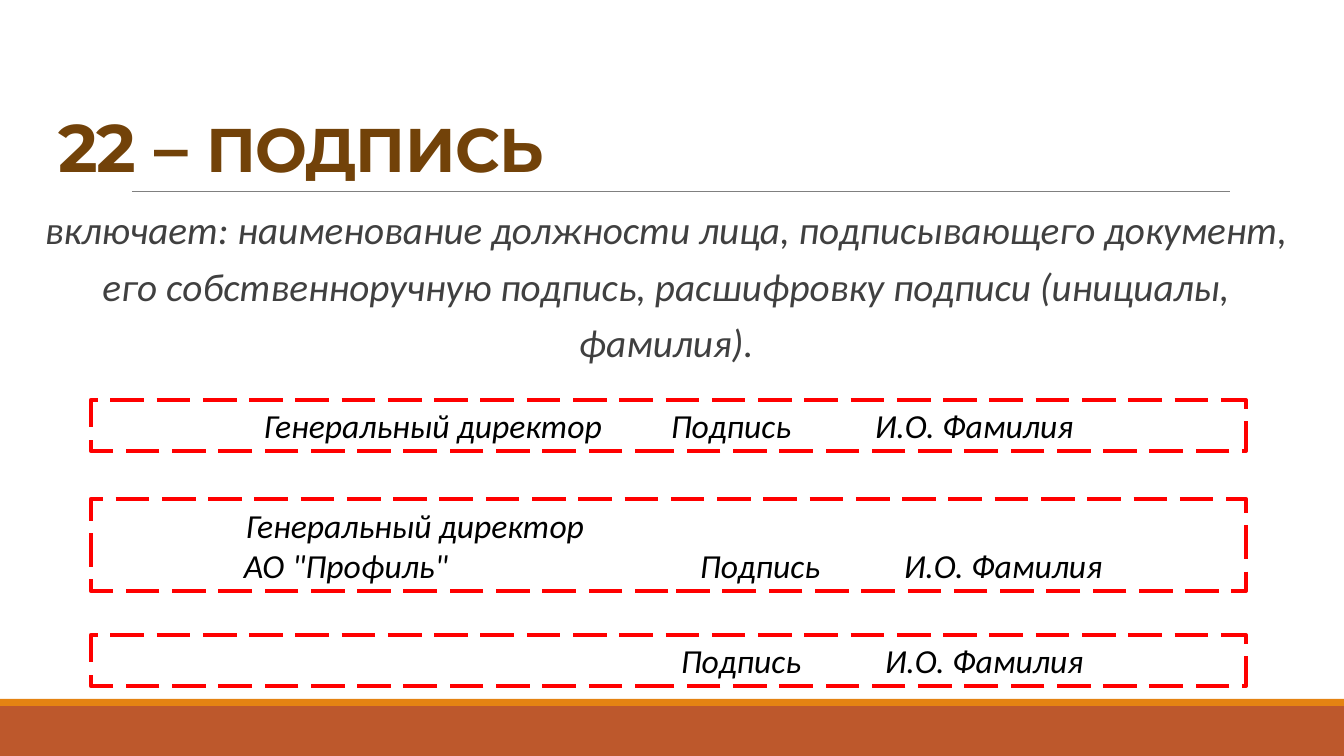
from dataclasses import dataclass
from lxml.etree import SubElement
from pptx import Presentation
from pptx.dml.color import RGBColor
from pptx.enum.dml import MSO_LINE
from pptx.enum.shapes import MSO_CONNECTOR, MSO_SHAPE
from pptx.enum.text import MSO_ANCHOR, MSO_AUTO_SIZE, PP_ALIGN
from pptx.oxml.ns import qn
from pptx.util import Emu, Inches, Pt


@dataclass(frozen=True)
class Theme:
    """Colours, fonts and type sizes of the slide."""
    rust: str = "BD582C"
    amber: str = "E48312"
    rule: str = "808080"
    brown: str = "724209"
    gray: str = "404040"
    black: str = "000000"
    red: str = "FF0000"
    head: str = "Montserrat"
    text: str = "Calibri"
    number: int = 48
    title: int = 44
    body: int = 28
    sample: int = 24


THEME = Theme()
SCALE = 914400 / 100.8
BOX_X, BOX_W, INSET = 91, 1155, 10
SAMPLES = [
    (400, 51, [("Генеральный директор", "Подпись", "И.О. Фамилия")], [(264, 671, 875)]),
    (499, 92,
     [("Генеральный директор",), ('АО "Профиль"', "Подпись", "И.О. Фамилия")],
     [(246,), (244, 700, 904)]),
    (635, 51, [("Подпись", "И.О. Фамилия")], [(681, 885)]),
]


def px(n):
    """Turn pixels into EMU."""
    return Emu(round(n * SCALE))


def color(code):
    """Turn a hex code into a colour."""
    return RGBColor.from_string(code)


def place(shape, x, y, w, h):
    """Move and size a shape in pixels."""
    shape.left, shape.top, shape.width, shape.height = map(px, (x, y, w, h))


def style(para, name, size, code, bold=False, italic=False):
    """Set the font of a whole paragraph."""
    font = para.font
    font.name, font.bold, font.italic = name, bold, italic
    font.color.rgb = color(code)
    if size:
        font.size = Pt(size)


def add_rect(slide, x, y, w, h):
    """Add a rectangle without shadow."""
    rect = slide.shapes.add_shape(MSO_SHAPE.RECTANGLE, *map(px, (x, y, w, h)))
    rect.shadow.inherit = False
    return rect


def add_band(slide, y, h, code):
    """Add a filled band across the slide."""
    band = add_rect(slide, 0, y, 1344, h)
    band.fill.solid()
    band.fill.fore_color.rgb = color(code)
    band.line.fill.background()


def add_rule(slide, x, y, end):
    """Add the thin line under the title."""
    rule = slide.shapes.add_connector(
        MSO_CONNECTOR.STRAIGHT, px(x), px(y), px(end), px(y))
    rule.line.color.rgb = color(THEME.rule)
    rule.line.width = Pt(0.5)
    SubElement(rule._element.spPr, qn("a:effectLst"))


def add_tabs(para, stops):
    """Give a paragraph left tab stops at slide pixels."""
    tabs = SubElement(para._p.get_or_add_pPr(), qn("a:tabLst"))
    for stop in stops:
        SubElement(tabs, qn("a:tab"), pos=str(px(stop - BOX_X - INSET)), algn="l")


def add_sample(slide, y, h, rows, stops):
    """Add a dashed box with rows of tabbed text."""
    box = add_rect(slide, BOX_X, y, BOX_W, h)
    box.fill.background()
    box.line.color.rgb = color(THEME.red)
    box.line.width = Pt(3)
    box.line.dash_style = MSO_LINE.LONG_DASH
    frame = box.text_frame
    frame.word_wrap = True
    frame.auto_size = MSO_AUTO_SIZE.SHAPE_TO_FIT_TEXT
    frame.text = "\n".join("\t" + "\t".join(row) for row in rows)
    for para, marks in zip(frame.paragraphs, stops):
        para.alignment = PP_ALIGN.LEFT
        add_tabs(para, marks)
        style(para, THEME.text, THEME.sample, THEME.black, italic=True)


def fill_title(shape):
    """Write the title in two sizes."""
    place(shape, 48, 31, 1240, 160)
    frame = shape.text_frame
    frame.auto_size = MSO_AUTO_SIZE.NONE
    frame.vertical_anchor = MSO_ANCHOR.BOTTOM
    para = frame.paragraphs[0]
    para.alignment = PP_ALIGN.LEFT
    para.line_spacing = 0.85
    style(para, THEME.head, None, THEME.brown, bold=True)
    for text, size in (("22 – ", THEME.number), ("ПОДПИСЬ", THEME.title)):
        run = para.add_run()
        run.text = text
        run.font.size = Pt(size)
        run._r.get_or_add_rPr().set("spc", "-50")


def fill_body(shape):
    """Write the definition without a bullet."""
    place(shape, 33, 191, 1256, 210)
    frame = shape.text_frame
    frame.auto_size = MSO_AUTO_SIZE.NONE
    frame.margin_left = frame.margin_right = 0
    frame.text = (
        "включает: наименование должности лица, подписывающего документ, "
        "его собственноручную подпись, расшифровку подписи (инициалы, фамилия).")
    para = frame.paragraphs[0]
    para.alignment = PP_ALIGN.CENTER
    para.line_spacing = 1.2
    para.space_before, para.space_after = Pt(12), Pt(2)
    props = para._p.get_or_add_pPr()
    props.set("marL", str(Inches(0.1)))
    props.set("indent", "0")
    SubElement(props, qn("a:buNone"))
    style(para, THEME.text, THEME.body, THEME.gray, italic=True)


def main():
    """Build and save the slide."""
    deck = Presentation()
    deck.slide_width, deck.slide_height = px(1344), px(756)
    slide = deck.slides.add_slide(deck.slide_layouts[1])
    add_band(slide, 706, 50, THEME.rust)
    add_band(slide, 699, 7, THEME.amber)
    add_rule(slide, 132, 191, 1230)
    fill_title(slide.shapes.title)
    fill_body(slide.placeholders[1])
    for sample in SAMPLES:
        add_sample(slide, *sample)
    deck.save("out.pptx")


if __name__ == "__main__":
    main()
